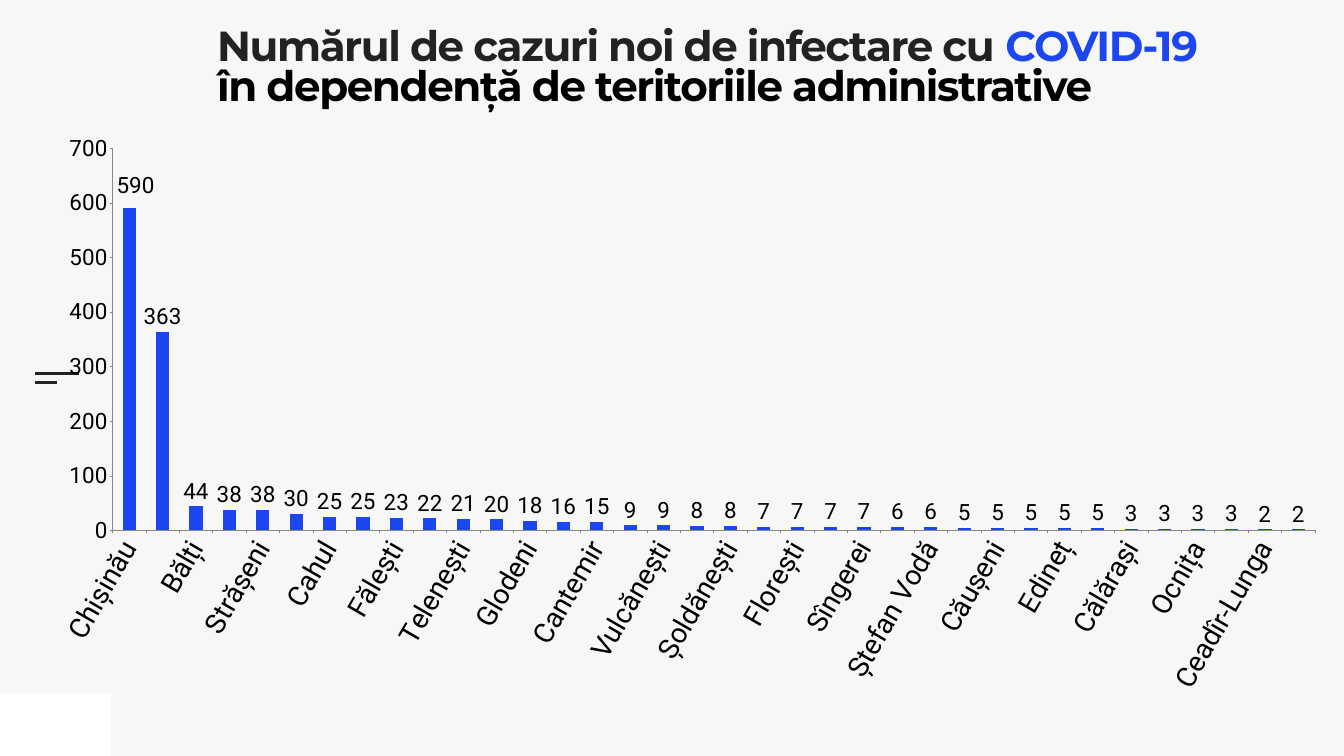
from lxml import etree
from pptx import Presentation
from pptx.chart.data import CategoryChartData
from pptx.dml.color import RGBColor
from pptx.enum.chart import XL_CHART_TYPE as CHART, XL_LABEL_POSITION as LABEL, XL_TICK_MARK as TICK
from pptx.enum.shapes import MSO_CONNECTOR, MSO_SHAPE
from pptx.oxml import parse_xml
from pptx.oxml.ns import nsdecls, qn
from pptx.util import Inches, Pt

COLORS = {k: RGBColor.from_string(v) for k, v in {
    "background": "F7F7F7", "corner": "FEFFFF", "dark": "222222",
    "blue": "1D46F3", "black": "000000", "axis": "888888",
}.items()}

CASES = {
    "Chișinău": 590, "Transnistria": 363, "Bălți": 44, "Ialoveni": 38,
    "Strășeni": 38, "Anenii Noi": 30, "Cahul": 25, "Cimișlia": 25,
    "Fălești": 23, "Orhei": 22, "Telenești": 21, "Nisporeni": 20,
    "Glodeni": 18, "Drochia": 16, "Cantemir": 15, "Hîncești": 9,
    "Vulcănești": 9, "Leova": 8, "Șoldănești": 8, "Criuleni": 7,
    "Florești": 7, "Rîșcani": 7, "Sîngerei": 7, "Rezina": 6,
    "Ștefan Vodă": 6, "Briceni": 5, "Căușeni": 5, "Comrat": 5,
    "Edineț": 5, "Ungheni": 5, "Călărași": 3, "Dondușeni": 3,
    "Ocnița": 3, "Soroca": 3, "Ceadîr-Lunga": 2, "Dubăsari": 2,
}


def manual_layout(**values):
    """Build a c:layout element; keyword order gives the child order."""
    children = "".join(f'<c:{k} val="{v}"/>' for k, v in values.items())
    return parse_xml(f'<c:layout {nsdecls("c")}><c:manualLayout>{children}'
                     '</c:manualLayout></c:layout>')


def set_font(font, size, color="black", name="Roboto", bold=False):
    font.size, font.name, font.bold = Pt(size), name, bold
    font.color.rgb = COLORS[color]


prs = Presentation()
prs.slide_width, prs.slide_height = Inches(26.67), Inches(15)
s = prs.slides.add_slide(prs.slide_layouts[6])
s.background.fill.solid()
s.background.fill.fore_color.rgb = COLORS["background"]

# Corner block and the two short menu lines
corner = s.shapes.add_shape(MSO_SHAPE.RECTANGLE, 0, Inches(13.76), Inches(2.2), Inches(1.24))
corner.shadow.inherit = False
corner.fill.solid()
corner.fill.fore_color.rgb = COLORS["corner"]
corner.line.fill.background()

for right, y in ((1.57, 7.41), (1.13, 7.59)):
    line = s.shapes.add_connector(MSO_CONNECTOR.STRAIGHT, Inches(0.69), Inches(y),
                                  Inches(right), Inches(y))
    line.line.color.rgb = COLORS["dark"]
    line.line.width = Pt(3)
    etree.SubElement(line._element.spPr, qn("a:effectLst"))

# Title
title = s.shapes.add_textbox(Inches(4.31), Inches(0.58), Inches(20.02), Inches(2.73))
tf = title.text_frame
tf.word_wrap = True
tf.margin_left = tf.margin_right = tf.margin_top = tf.margin_bottom = 0
title_lines = [
    [("Numărul de cazuri noi de infectare cu ", "dark"), ("COVID-19", "blue")],
    [("în dependență de teritoriile administrative", "black")],
]
for i, runs in enumerate(title_lines):
    p = tf.add_paragraph() if i else tf.paragraphs[0]
    p.line_spacing = 0.8
    for text, color in runs:
        r = p.add_run()
        r.text = text
        set_font(r.font, 60, color, "Montserrat", True)
        r.font._element.set("spc", "-200")

# Chart
data = CategoryChartData()
data.categories = list(CASES)
data.add_series("Series 1", list(CASES.values()))
chart = s.shapes.add_chart(CHART.COLUMN_CLUSTERED, Inches(1.1), Inches(2.68),
                           Inches(25.17), Inches(11.85), data).chart
chart.has_legend = chart.has_title = False
set_font(chart.font, 40)

plot_area = chart._chartSpace.chart.plotArea
for old in plot_area.findall(qn("c:layout")):
    plot_area.remove(old)
plot_area.insert(0, manual_layout(layoutTarget="inner", xMode="edge", yMode="edge",
                                  x=0.045, y=0.022, w=0.948, h=0.64))

for axis, size in ((chart.category_axis, 40), (chart.value_axis, 32)):
    axis.has_major_gridlines = False
    axis.major_tick_mark = TICK.OUTSIDE
    axis.minor_tick_mark = TICK.NONE
    axis.format.line.color.rgb = COLORS["axis"]
    set_font(axis.tick_labels.font, size)
chart.value_axis.minimum_scale = 0
chart.value_axis.maximum_scale = 700
chart.value_axis.major_unit = 100

cat_axis = chart.category_axis._element
cat_axis.find(f'{qn("c:txPr")}/{qn("a:bodyPr")}').set("rot", "-3600000")
cat_axis.find(qn("c:noMultiLvlLbl")).addprevious(
    parse_xml(f'<c:tickLblSkip {nsdecls("c")} val="2"/>'))

plot = chart.plots[0]
plot.gap_width = 150
plot.vary_by_categories = False
series = plot.series[0]
series.format.fill.solid()
series.format.fill.fore_color.rgb = COLORS["blue"]
labels = series.data_labels
labels.show_value = True
labels.position = LABEL.OUTSIDE_END
set_font(labels.font, 32)

# The first label is nudged clear of the value axis
first = series.points[0].data_label
set_font(first.font, 32)
first.position = LABEL.OUTSIDE_END
labels._element.find(f'{qn("c:dLbl")}/{qn("c:idx")}').addnext(manual_layout(x=0.005, y=-0.013))

prs.save("out.pptx")
